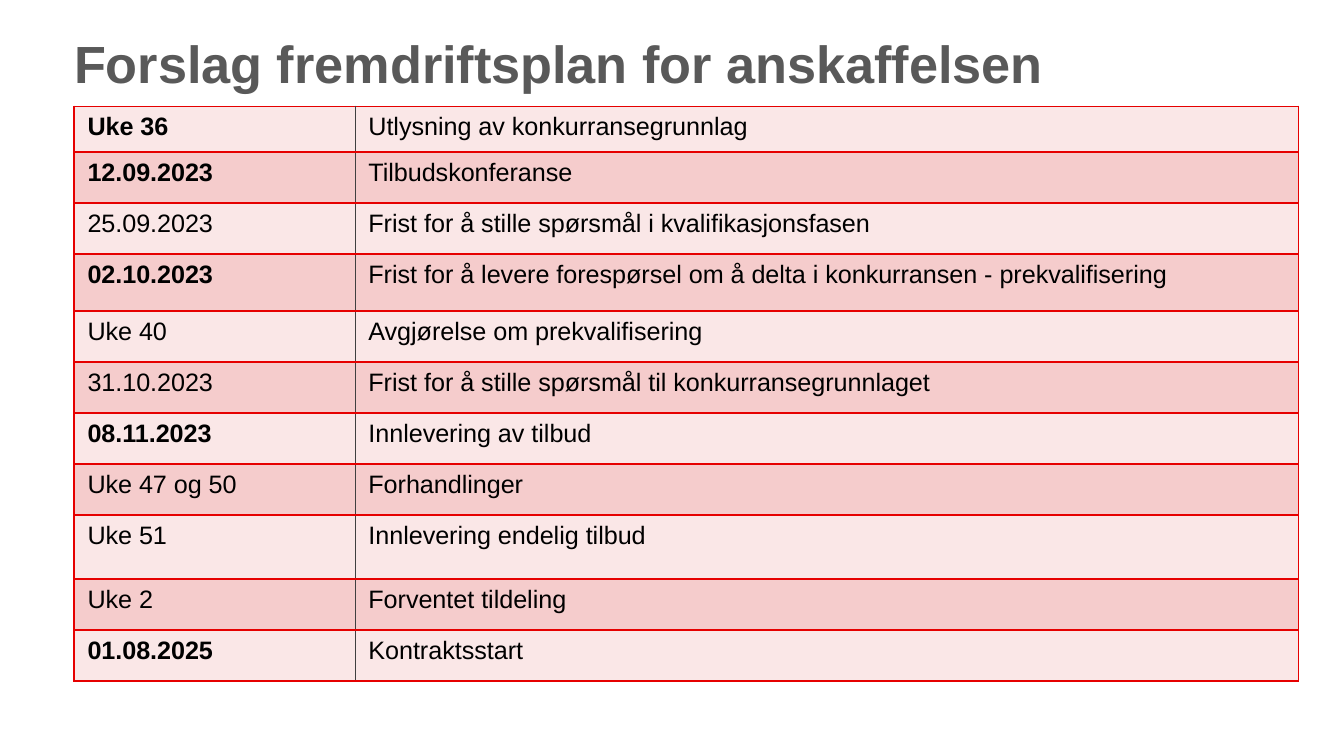
import pptx
import pptx.dml.color
import pptx.enum.text
import pptx.oxml.ns
import pptx.util
from lxml import etree

Cm = pptx.util.Cm
Pt = pptx.util.Pt
RGBColor = pptx.dml.color.RGBColor

FONT = "Arial"
TITLE_GRAY = RGBColor(0x59, 0x59, 0x59)
BLACK = RGBColor(0, 0, 0)
BORDER_RED = RGBColor(0xE6, 0, 0)
DIVIDER_GRAY = RGBColor(0x40, 0x40, 0x40)
BAND_COLORS = (RGBColor(0xFA, 0xE7, 0xE7), RGBColor(0xF5, 0xCC, 0xCC))

COLUMN_WIDTHS = (5.31, 17.83)
ROW_HEIGHT = 0.965
SPECIAL_HEIGHTS = {0: 0.86, 3: 1.08, 8: 1.2}

MILESTONES = (
    ("Uke 36", "Utlysning av konkurransegrunnlag", True),
    ("12.09.2023", "Tilbudskonferanse", True),
    ("25.09.2023", "Frist for å stille spørsmål i kvalifikasjonsfasen", False),
    ("02.10.2023", "Frist for å levere forespørsel om å delta i konkurransen - prekvalifisering", True),
    ("Uke 40", "Avgjørelse om prekvalifisering", False),
    ("31.10.2023", "Frist for å stille spørsmål til konkurransegrunnlaget", False),
    ("08.11.2023", "Innlevering av tilbud", True),
    ("Uke 47 og 50", "Forhandlinger", False),
    ("Uke 51", "Innlevering endelig tilbud", False),
    ("Uke 2", "Forventet tildeling", False),
    ("01.08.2025", "Kontraktsstart", True),
)


def add_run(paragraph, text, size, color, bold):
    run = paragraph.add_run()
    run.text = text
    run.font.name = FONT
    run.font.size = Pt(size)
    run.font.bold = bold
    run.font.color.rgb = color


def add_title(slide, text):
    shape = slide.shapes.add_textbox(Cm(1.4), Cm(0.58), Cm(22.17), Cm(1.2))
    frame = shape.text_frame
    frame.word_wrap = True
    frame.vertical_anchor = pptx.enum.text.MSO_ANCHOR.MIDDLE
    frame.margin_left = frame.margin_right = 0
    frame.margin_top = frame.margin_bottom = 0
    add_run(frame.paragraphs[0], text, 28, TITLE_GRAY, True)


def add_border(cell, side, color, width):
    qn = pptx.oxml.ns.qn
    properties = cell._tc.get_or_add_tcPr()
    line = etree.SubElement(properties, qn(f"a:ln{side}"), w=str(Pt(width)))
    fill = etree.SubElement(line, qn("a:solidFill"))
    etree.SubElement(fill, qn("a:srgbClr"), val=str(color))


def style_cell(cell, column_index, fill_color):
    divider_side = "R" if column_index == 0 else "L"
    for side in "LRTB":
        if side == divider_side:
            add_border(cell, side, DIVIDER_GRAY, 0.5)
        else:
            add_border(cell, side, BORDER_RED, 1)
    cell.fill.solid()
    cell.fill.fore_color.rgb = fill_color


def add_schedule(slide, milestones):
    heights = [SPECIAL_HEIGHTS.get(i, ROW_HEIGHT) for i in range(len(milestones))]
    shape = slide.shapes.add_table(
        len(milestones), len(COLUMN_WIDTHS), Cm(1.4), Cm(2.01),
        Cm(sum(COLUMN_WIDTHS)), Cm(sum(heights)),
    )
    table = shape.table
    table.first_row = False
    table.horz_banding = False
    for column, width in zip(table.columns, COLUMN_WIDTHS):
        column.width = Cm(width)
    for row_index, (date, activity, important) in enumerate(milestones):
        row = table.rows[row_index]
        row.height = Cm(heights[row_index])
        contents = ((date, important), (activity, False))
        for column_index, (text, bold) in enumerate(contents):
            cell = row.cells[column_index]
            style_cell(cell, column_index, BAND_COLORS[row_index % 2])
            add_run(cell.text_frame.paragraphs[0], text, 13.5, BLACK, bold)


def main():
    presentation = pptx.Presentation()
    presentation.slide_width = Cm(25.4)
    presentation.slide_height = Cm(14.29)
    slide = presentation.slides.add_slide(presentation.slide_layouts[6])
    add_title(slide, "Forslag fremdriftsplan for anskaffelsen")
    add_schedule(slide, MILESTONES)
    presentation.save("out.pptx")


if __name__ == "__main__":
    main()
